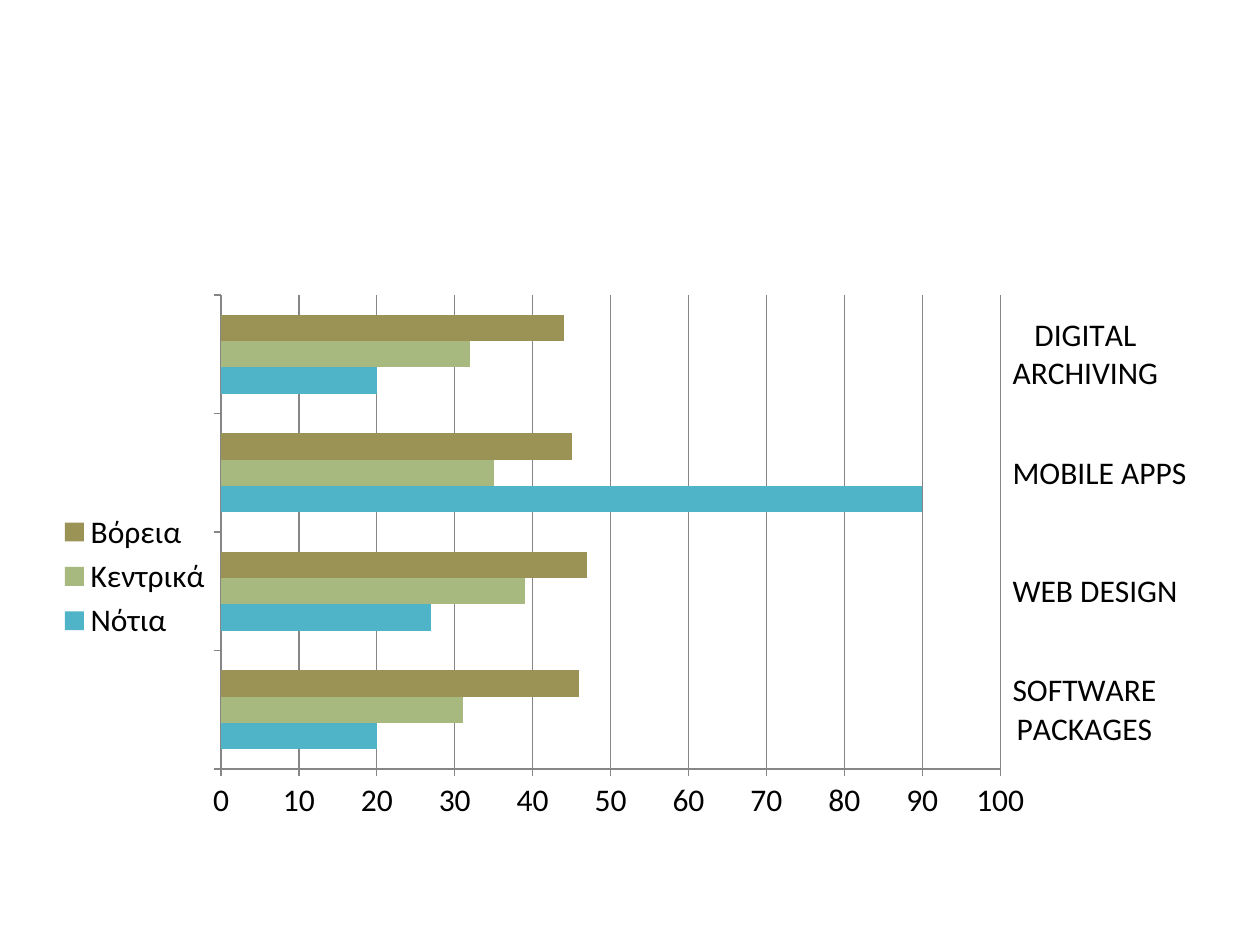
from dataclasses import dataclass

from lxml import etree
from pptx import Presentation
from pptx import util as u
from pptx.chart.data import CategoryChartData
from pptx.dml.color import RGBColor
from pptx.enum import chart as kinds
from pptx.oxml import parse_xml
from pptx.oxml.ns import nsdecls, qn


@dataclass(frozen=True)
class Theme:
    font: str = "Calibri"
    size: int = 18
    ink: str = "000000"
    line: str = "868686"
    bars: tuple = ("50B4C8", "A8B97F", "9B9256")


THEME = Theme()
SERVICES = ("SOFTWARE PACKAGES", "WEB DESIGN", "MOBILE APPS", "DIGITAL ARCHIVING")
REGIONS = {
    "Νότια": (20, 27, 90, 20),
    "Κεντρικά": (31, 39, 35, 32),
    "Βόρεια": (46, 47, 45, 44),
}
CHART_BOX = (0.035, 0.28, 0.93, 0.66)
PLOT_BOX = (0.151, 0.049, 0.665, 0.76)


def color(code):
    return RGBColor.from_string(code)


def fix_plot(chart, box):
    area = chart._chartSpace.find(".//" + qn("c:plotArea"))
    for old in area.findall(qn("c:layout")):
        area.remove(old)
    layout = parse_xml(f"<c:layout {nsdecls('c')}><c:manualLayout/></c:layout>")
    settings = [("layoutTarget", "inner"), ("xMode", "edge"), ("yMode", "edge")]
    settings += zip("xywh", map(str, box))
    for name, value in settings:
        etree.SubElement(layout[0], qn(f"c:{name}")).set("val", value)
    area.insert(0, layout)


def style_axis(axis):
    axis.major_tick_mark = kinds.XL_TICK_MARK.OUTSIDE
    axis.minor_tick_mark = kinds.XL_TICK_MARK.NONE
    axis.format.line.color.rgb = color(THEME.line)
    axis.format.line.width = u.Pt(0.75)


def add_region_chart(page, box):
    data = CategoryChartData(number_format="General")
    data.categories = SERVICES
    for region, values in REGIONS.items():
        data.add_series(region, values)
    chart = page.shapes.add_chart(
        kinds.XL_CHART_TYPE.BAR_CLUSTERED, *box, data
    ).chart
    chart.has_title = False
    chart.font.name = THEME.font
    chart.font.size = u.Pt(THEME.size)
    chart.font.color.rgb = color(THEME.ink)

    plot = chart.plots[0]
    plot.gap_width = 150
    plot.overlap = 0
    plot.vary_by_categories = False
    for series, code in zip(plot.series, THEME.bars):
        series.format.fill.solid()
        series.format.fill.fore_color.rgb = color(code)

    services, scale = chart.category_axis, chart.value_axis
    for axis in (services, scale):
        style_axis(axis)
    services.tick_label_position = kinds.XL_TICK_LABEL_POSITION.HIGH
    scale.minimum_scale, scale.maximum_scale, scale.major_unit = 0, 100, 10
    scale.has_major_gridlines = True
    scale.major_gridlines.format.line.color.rgb = color(THEME.line)
    scale.major_gridlines.format.line.width = u.Pt(0.75)

    chart.has_legend = True
    chart.legend.position = kinds.XL_LEGEND_POSITION.LEFT
    chart.legend.include_in_layout = False
    fix_plot(chart, PLOT_BOX)


def main():
    deck = Presentation()
    deck.slide_width, deck.slide_height = u.Inches(10), u.Inches(7.5)
    page = deck.slides.add_slide(deck.slide_layouts[6])
    sides = (deck.slide_width, deck.slide_height) * 2
    add_region_chart(page, [int(share * side) for share, side in zip(CHART_BOX, sides)])
    deck.save("out.pptx")


if __name__ == "__main__":
    main()
